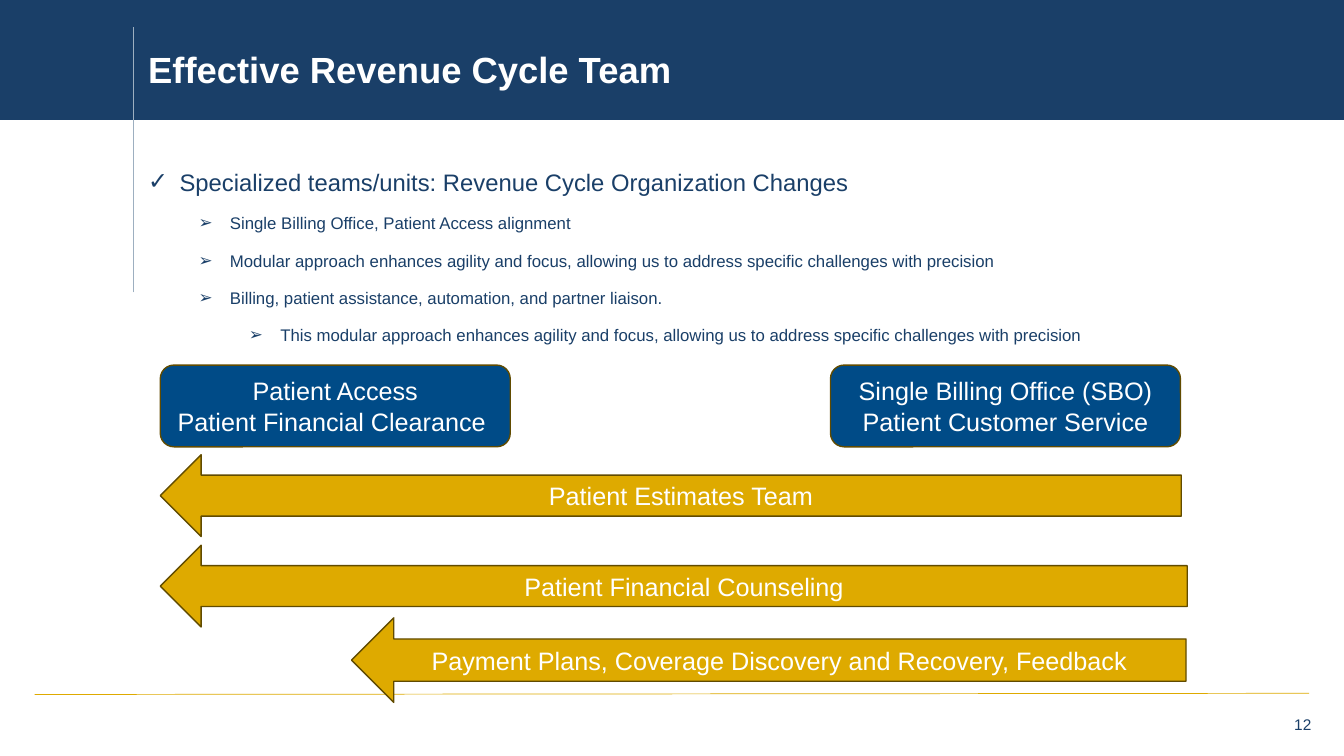
from lxml import etree
from pptx import Presentation
from pptx.dml.color import RGBColor
from pptx.enum import shapes, text
from pptx.oxml import ns
from pptx.util import Cm, Pt

HUES = {
    "navy": "1A3F68",
    "blue": "004B87",
    "gold": "DEAA00",
    "brown": "614B00",
    "mist": "9DAFC0",
    "white": "FFFFFF",
}
LEFT, MID, RIGHT = text.PP_ALIGN.LEFT, text.PP_ALIGN.CENTER, text.PP_ALIGN.RIGHT

# level, bullet, size, wording
LIST = [
    (0, "✓", 17, "Specialized teams/units: Revenue Cycle Organization Changes"),
    (1, "➢", 12, "Single Billing Office, Patient Access alignment"),
    (1, "➢", 12, "Modular approach enhances agility and focus, allowing us to "
                 "address specific challenges with precision"),
    (1, "➢", 12, "Billing, patient assistance, automation, and partner liaison."),
    (2, "➢", 12, "This modular approach enhances agility and focus, allowing us "
                 "to address specific challenges with precision"),
]
# left, wording
UNITS = [
    (4.04, ["Patient Access", "Patient Financial Clearance "]),
    (20.93, ["Single Billing Office (SBO)", "Patient Customer Service"]),
]
# left, top, width, height, wording
ARROWS = [
    (4.04, 11.46, 25.73, 2.06, "Patient Estimates Team"),
    (4.04, 13.74, 25.88, 2.06, "Patient Financial Counseling"),
    (8.86, 15.57, 21.03, 2.13,
     "Payment Plans, Coverage Discovery and Recovery, Feedback"),
]


def hue(name):
    return RGBColor.from_string(HUES[name])


def write(para, words, size=18, color="white", bold=False, align=MID,
          lines=1.0, before=0):
    para.text = words
    para.alignment = align
    para.line_spacing = lines
    para.space_before = Pt(before)
    font = para.font
    font.name, font.size, font.bold = "Arial", Pt(size), bold
    font.color.rgb = hue(color)


def place(shape, left, top, width, height):
    shape.left, shape.top = Cm(left), Cm(top)
    shape.width, shape.height = Cm(width), Cm(height)


def set_frame(shape, anchor):
    frame = shape.text_frame
    frame.word_wrap = True
    frame.auto_size = text.MSO_AUTO_SIZE.NONE
    frame.vertical_anchor = anchor
    return frame


def add_block(slide, kind, box, fill, edge=None, lines=()):
    block = slide.shapes.add_shape(kind, *map(Cm, box))
    block.shadow.inherit = False
    block.fill.solid()
    block.fill.fore_color.rgb = hue(fill)
    if edge:
        block.line.color.rgb = hue(edge)
        block.line.width = Pt(1)
    else:
        block.line.fill.background()
    frame = set_frame(block, text.MSO_ANCHOR.MIDDLE)
    for i, words in enumerate(lines):
        write(frame.add_paragraph() if i else frame.paragraphs[0], words)
    return block


def add_rule(slide, ends, color):
    rule = slide.shapes.add_connector(
        shapes.MSO_CONNECTOR.STRAIGHT, *map(Cm, ends))
    rule.line.color.rgb = hue(color)
    rule.line.width = Pt(0.5)
    etree.SubElement(rule.element.spPr, ns.qn("a:effectLst"))
    return rule


def set_bullet(para, sign, level):
    para.level = level
    props = para._p.get_or_add_pPr()
    props.set("marL", str(Cm(0.79 + 1.27 * level)))
    props.set("indent", str(-Cm(0.79)))
    etree.SubElement(props, ns.qn("a:buFont"), typeface="Arial")
    etree.SubElement(props, ns.qn("a:buChar"), char=sign)


def fill_list(body):
    place(body, 3.48, 3.73, 29.49, 12.95)
    frame = set_frame(body, text.MSO_ANCHOR.TOP)
    for i, (level, sign, size, words) in enumerate(LIST):
        para = frame.add_paragraph() if i else frame.paragraphs[0]
        set_bullet(para, sign, level)
        write(para, words, size=size, color="navy", align=LEFT, lines=1.5,
              before=5 if i else 0)


def fill_title(title):
    place(title, 3.48, 1.19, 30, 1.24)
    frame = set_frame(title, text.MSO_ANCHOR.BOTTOM)
    write(frame.paragraphs[0], "Effective Revenue Cycle Team", size=26,
          bold=True, align=LEFT, lines=0.9)


def add_number(slide):
    box = slide.shapes.add_textbox(Cm(24.33), Cm(17.73), Cm(8.97), Cm(0.89))
    frame = set_frame(box, text.MSO_ANCHOR.BOTTOM)
    write(frame.paragraphs[0], "12", size=11, color="navy", align=RIGHT,
          lines=0.9)


def main():
    deck = Presentation()
    deck.slide_width, deck.slide_height = Cm(33.87), Cm(19.05)
    slide = deck.slides.add_slide(deck.slide_layouts[1])
    title, body = slide.placeholders
    fill_title(title)
    fill_list(body)

    kind = shapes.MSO_SHAPE
    band = add_block(slide, kind.RECTANGLE, (0, 0, 33.87, 3.02), "navy")
    side = add_rule(slide, (3.36, 7.37, 3.36, 0.69), "mist")
    base = add_rule(slide, (32.99, 17.47, 0.87, 17.5), "gold")
    for part in (band, side, base):  # behind the title
        title.element.addprevious(part.element)

    for left, lines in UNITS:
        add_block(slide, kind.ROUNDED_RECTANGLE, (left, 9.2, 8.82, 2.06),
                  "blue", "brown", lines)
    for *box, words in ARROWS:
        add_block(slide, kind.LEFT_ARROW, box, "gold", "brown", [words])
    add_number(slide)
    deck.save("out.pptx")


if __name__ == "__main__":
    main()
